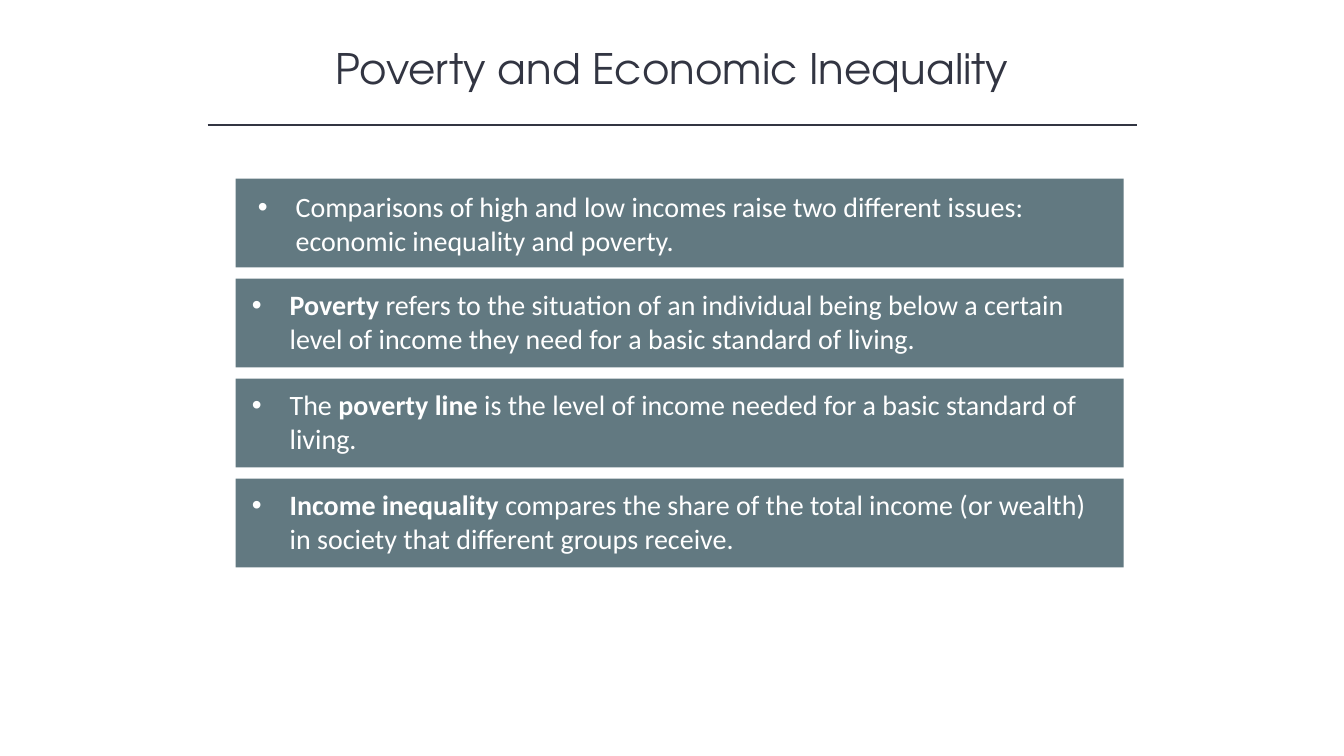
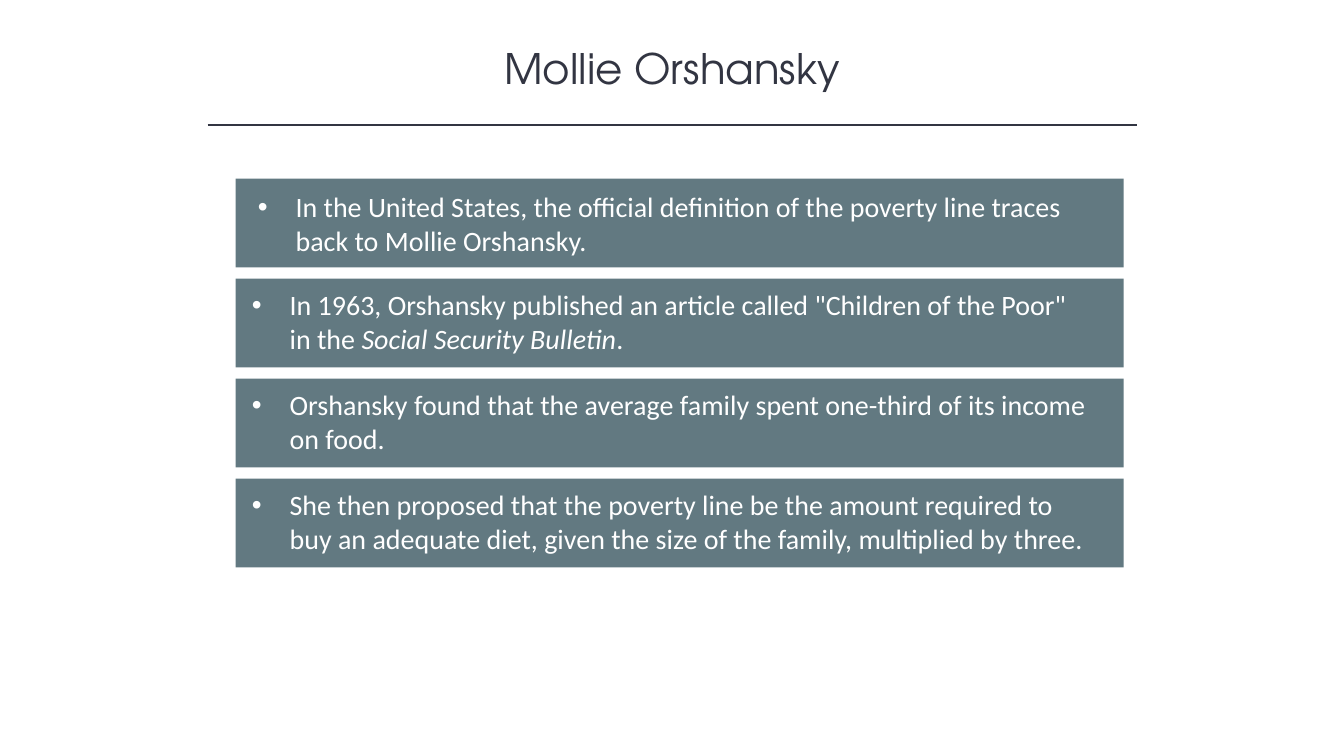
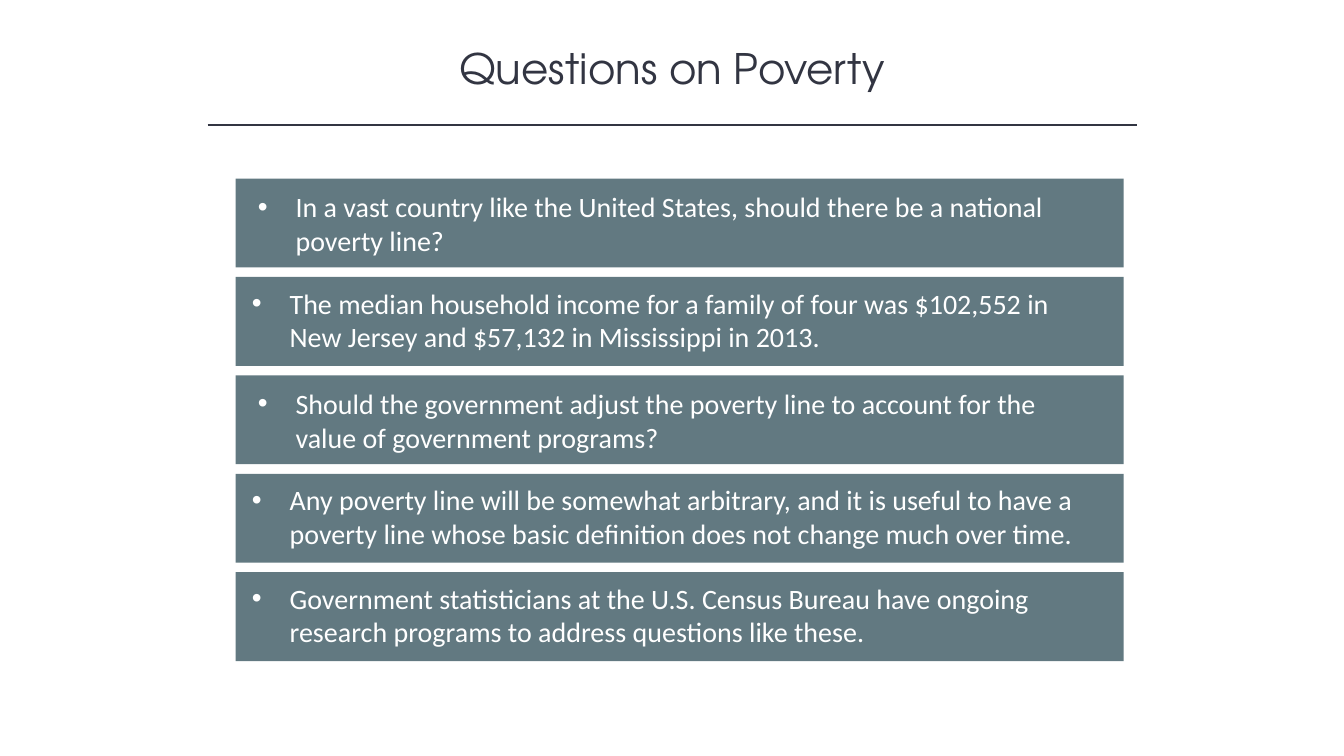
from lxml.etree import SubElement
from pptx import Presentation
from pptx.dml.color import RGBColor
from pptx.enum.shapes import MSO_CONNECTOR as CONNECTOR, MSO_SHAPE as SHAPE
from pptx.enum.text import MSO_ANCHOR as ANCHOR, PP_ALIGN as ALIGN
from pptx.oxml.ns import qn
from pptx.util import Cm, Pt

# Shared style
INK, BAR, WHITE = "323542", "627981", "FFFFFF"
TITLE_FONT, BODY_FONT = "TeX Gyre Adventor", "Calibri"
BAR_LEFT, BAR_TOP, BAR_WIDTH, BAR_HEIGHT = 5.94, 4.5, 22.38, 2.24
HANGING = Cm(0.95)


def color(hex_value):
    return RGBColor.from_string(hex_value)


def add_text(paragraph, text, font=BODY_FONT, size=20, fill=WHITE, bold=False, italic=False):
    run = paragraph.add_run()
    run.text = text
    run.font.name = font
    run.font.size = Pt(size)
    run.font.color.rgb = color(fill)
    run.font.bold = bold
    run.font.italic = italic


# Content: title, distance between bars, bars with a deeper text inset, bars as (text, style) parts
BOLD, ITALIC, PLAIN = {"bold": True}, {"italic": True}, {}
slides = [
    ("Poverty and Economic Inequality", 2.52, {0}, [
        [("Comparisons of high and low incomes raise two different issues: "
          "economic inequality and poverty.", PLAIN)],
        [("Poverty", BOLD),
         (" refers to the situation of an individual being below a certain level of income "
          "they need for a basic standard of living.", PLAIN)],
        [("The ", PLAIN), ("poverty line ", BOLD),
         ("is the level of income needed for a basic standard of living.", PLAIN)],
        [("Income inequality ", BOLD),
         ("compares the share of the total income (or wealth) in society that different "
          "groups receive.", PLAIN)],
    ]),
    ("Mollie Orshansky", 2.52, {0}, [
        [("In the United States, the official definition of the poverty line traces back to "
          "Mollie Orshansky.", PLAIN)],
        [('In 1963, Orshansky published an article called "Children of the Poor" in the ', PLAIN),
         ("Social Security Bulletin", ITALIC), (".", PLAIN)],
        [("Orshansky found that the average family spent one-third of its income on food.", PLAIN)],
        [("She then proposed that the poverty line be the amount required to buy an adequate "
          "diet, given the size of the family, multiplied by three.", PLAIN)],
    ]),
    ("Questions on Poverty", 2.48, {0, 2}, [
        [("In a vast country like the United States, should there be a national poverty line?",
          PLAIN)],
        [("The median household income for a family of four was $102,552 in New Jersey and "
          "$57,132 in Mississippi in 2013.", PLAIN)],
        [("Should the government adjust the poverty line to account for the value of "
          "government programs?", PLAIN)],
        [("Any poverty line will be somewhat arbitrary, and it is useful to have a poverty "
          "line whose basic definition does not change much over time.", PLAIN)],
        [("Government statisticians at the U.S. Census Bureau have ongoing research programs "
          "to address questions like these.", PLAIN)],
    ]),
]

presentation = Presentation()
presentation.slide_width, presentation.slide_height = Cm(33.87), Cm(19.05)

# Title position, set once on the layout
layout = presentation.slide_layouts[5]
layout_title = layout.placeholders[0]
layout_title.left, layout_title.top = Cm(4.24), Cm(0.94)
layout_title.width, layout_title.height = Cm(25.4), Cm(1.55)

for title, pitch, inset_bars, bars in slides:
    slide = presentation.slides.add_slide(layout)

    # Title
    paragraph = slide.shapes.title.text_frame.paragraphs[0]
    paragraph.alignment = ALIGN.CENTER
    add_text(paragraph, title, font=TITLE_FONT, size=30, fill=INK)

    # Rule under the title
    rule = slide.shapes.add_connector(CONNECTOR.STRAIGHT, Cm(5.23), Cm(3.15), Cm(28.65), Cm(3.15))
    rule.line.color.rgb = color(INK)
    rule.line.width = Pt(1)
    SubElement(rule._element.spPr, qn("a:effectLst"))

    # Bulleted bars
    for index, parts in enumerate(bars):
        bar = slide.shapes.add_shape(SHAPE.RECTANGLE, Cm(BAR_LEFT), Cm(BAR_TOP + index * pitch),
                                     Cm(BAR_WIDTH), Cm(BAR_HEIGHT))
        bar.shadow.inherit = False
        bar.fill.solid()
        bar.fill.fore_color.rgb = color(BAR)
        bar.line.fill.background()

        left, top, right = (0.56, 0.28, 0.63) if index in inset_bars else (0.41, 0.23, 0.79)
        frame = bar.text_frame
        frame.word_wrap = True
        frame.vertical_anchor = ANCHOR.TOP
        frame.margin_left, frame.margin_top = Cm(left), Cm(top)
        frame.margin_right, frame.margin_bottom = Cm(right), Cm(0)

        paragraph = frame.paragraphs[0]
        paragraph.alignment = ALIGN.LEFT
        properties = paragraph._p.get_or_add_pPr()
        properties.set("marL", str(HANGING))
        properties.set("indent", str(-HANGING))
        SubElement(properties, qn("a:buFont"), typeface="Arial")
        SubElement(properties, qn("a:buChar"), char="•")
        for text, style in parts:
            add_text(paragraph, text, **style)

presentation.save("out.pptx")
